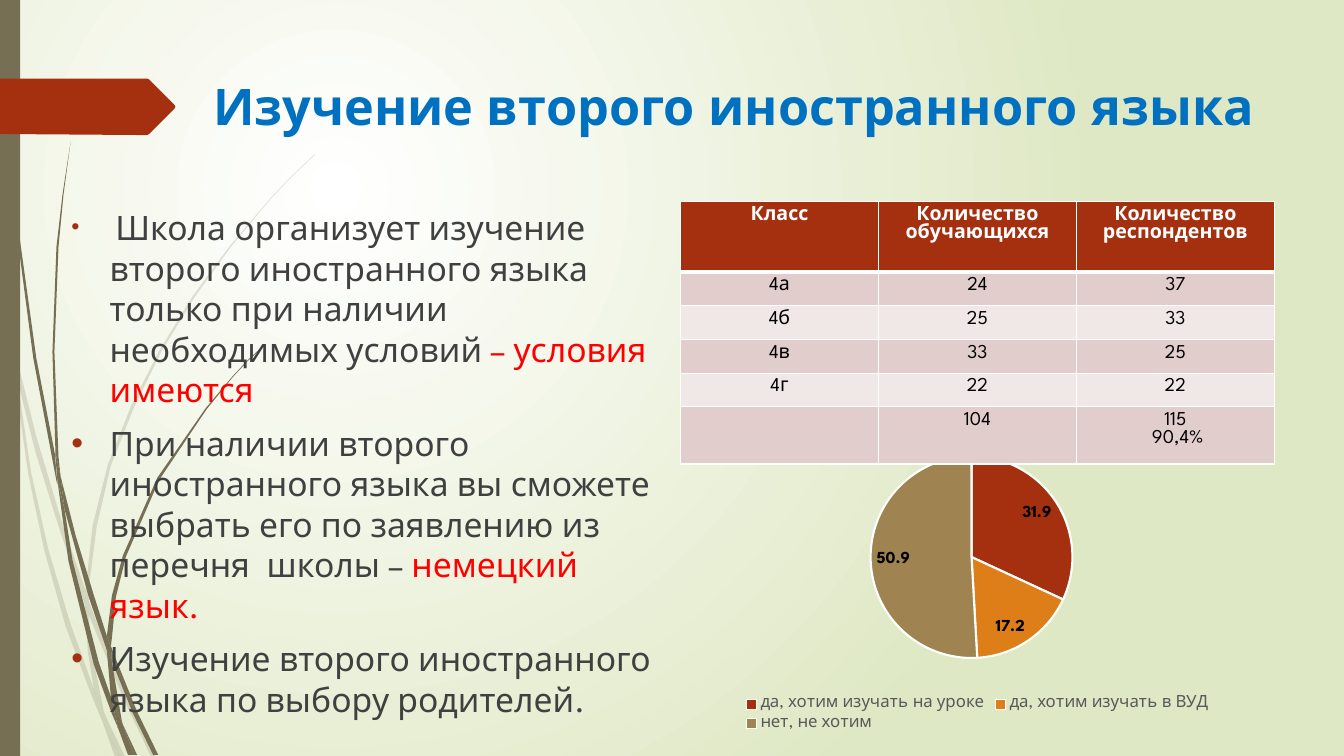
from lxml import etree
from pptx import Presentation
from pptx.chart.data import CategoryChartData
from pptx.dml.color import RGBColor
from pptx.enum.chart import XL_CHART_TYPE, XL_LABEL_POSITION, XL_LEGEND_POSITION
from pptx.enum.shapes import MSO_SHAPE
from pptx.enum.text import MSO_ANCHOR, PP_ALIGN
from pptx.oxml.ns import qn
from pptx.util import Inches, Pt

PIE = XL_CHART_TYPE.PIE
LABEL_INSIDE = XL_LABEL_POSITION.INSIDE_END
LEGEND_BOTTOM = XL_LEGEND_POSITION.BOTTOM
RECTANGLE = MSO_SHAPE.RECTANGLE
TOP = MSO_ANCHOR.TOP
LEFT, CENTER = PP_ALIGN.LEFT, PP_ALIGN.CENTER

FONT = "League Spartan"
WHITE, BLACK, GREY, LEGEND_GREY = "FFFFFF", "000000", "404040", "595959"
OLIVE, RUST, ORANGE, TAN = "766F54", "A53010", "DE7E18", "9F8351"
BLUE, RED, PALE_GREEN = "0070C0", "FF0000", "DFE8C4"
ROW_BANDS = ("E1CDCC", "F0E8E7")

PALE_GRASS = [
    [(0.11, 3.5), (0.09, 3.22), (0, 2.82), (0, 2.99), (0.1, 3.44)],
    [(0.58, 5.22), (0.84, 5.99), (0.85, 5.86), (0.62, 5.2), (0.36, 4.33), (0.14, 3.45),
     (0.17, 3.76), (0.35, 4.48)],
    [(0.92, 6.07), (0.88, 5.96), (0.88, 6.1), (1.23, 6.94), (1.5, 7.51), (1.55, 7.51), (1.27, 6.92)],
    [(1.19, 7.51), (1.24, 7.51), (1.05, 7.11)],
    [(0.93, 6.83), (0.7, 6.19), (0.48, 5.45), (0.31, 4.69), (0.17, 3.76), (0.11, 3.5),
     (0.28, 4.7), (0.44, 5.46), (0.65, 6.21), (0.92, 6.93), (1.01, 7.14), (0.99, 7.07)],
    [(0.84, 5.99), (0.87, 6.46), (0.93, 6.83), (0.96, 6.92), (1.05, 7.11), (1.03, 7.06),
     (0.91, 6.46), (0.88, 6.1), (0.88, 6.08)],
    [(0.88, 5.84), (0.96, 5.22), (1.1, 4.62), (1.33, 4.04), (1.6, 3.49), (1.93, 2.95), (2.29, 2.45),
     (2.68, 1.98), (2.9, 1.75), (3.12, 1.54), (3.12, 1.53), (2.89, 1.75), (2.68, 1.97), (2.28, 2.44),
     (1.91, 2.94), (1.58, 3.48), (1.3, 4.03), (1.07, 4.61), (0.92, 5.21), (0.85, 5.84), (0.85, 5.86),
     (0.88, 5.96)],
    [(1.01, 7.14), (1.14, 7.51), (1.19, 7.51)],
    [(0.88, 6.08), (0.88, 6.1), (0.88, 5.96), (0.85, 5.86), (0.84, 5.99)],
    [(0.96, 6.92), (0.93, 6.83), (0.99, 7.07), (1.01, 7.14), (1.19, 7.51), (1.05, 7.11)],
]
DARK_GRASS = [
    [(0.07, 1.1), (0.17, 2.33), (0.33, 3.55), (0.56, 4.77), (0.57, 4.81), (0.55, 4.57), (0.55, 4.53),
     (0.36, 3.55), (0.19, 2.32), (0.08, 1.09), (0.05, 0.48), (0.04, 0), (0.03, 0), (0.04, 0.48)],
    [(0.88, 5.92), (1.06, 6.45), (1.06, 6.33), (1.06, 6.31), (0.93, 5.9), (0.75, 5.31), (0.6, 4.72),
     (0.64, 5.05)],
    [(1.13, 6.49), (1.1, 6.41), (1.11, 6.56), (1.32, 7.08), (1.52, 7.49), (1.57, 7.49), (1.36, 7.06)],
    [(1.1, 6.91), (0.98, 6.57), (0.72, 5.56), (0.64, 5.05), (0.57, 4.77), (0.68, 5.57), (0.93, 6.59),
     (1.11, 7.08), (1.17, 7.22), (1.16, 7.17)],
    [(0.6, 4.72), (0.58, 4.53), (0.54, 3.49), (0.58, 2.45), (0.63, 1.93), (0.7, 1.41), (0.62, 1.93),
     (0.56, 2.45), (0.52, 3.49), (0.55, 4.49)],
    [(1.33, 7.49), (1.36, 7.49), (1.22, 7.19)],
    [(0.57, 4.77), (0.64, 5.05), (0.6, 4.72), (0.55, 4.49), (0.55, 4.53)],
    [(1.11, 6.33), (1.15, 5.92), (1.25, 5.52), (1.58, 4.76), (2.05, 4.06), (2.31, 3.74), (2.45, 3.59),
     (2.61, 3.44), (2.6, 3.44), (2.45, 3.58), (2.31, 3.73), (2.04, 4.05), (1.56, 4.74), (1.22, 5.51),
     (1.11, 5.91), (1.06, 6.31), (1.1, 6.41)],
    [(1.17, 7.22), (1.27, 7.49), (1.31, 7.49)],
    [(1.06, 6.45), (1.1, 6.91), (1.16, 7.06), (1.22, 7.19), (1.21, 7.16), (1.11, 6.56), (1.09, 6.51)],
    [(1.06, 6.45), (1.09, 6.51), (1.11, 6.56), (1.1, 6.41), (1.06, 6.31)],
    [(1.16, 7.06), (1.1, 6.91), (1.16, 7.17), (1.17, 7.22), (1.3, 7.49), (1.33, 7.49), (1.22, 7.19)],
]
TITLE_TAG = [(1.73, 1.08), (1.48, 1.33), (1.46, 1.34), (1.36, 1.34), (0, 1.33), (0, 0.78),
             (1.46, 0.78), (1.48, 0.79), (1.73, 1.04), (1.74, 1.06)]

CONDITIONS = [
    [(" ", GREY, 16.6),
     ("Школа организует изучение второго иностранного языка только при наличии необходимых условий ",
      GREY, 24),
     ("– условия имеются", RED, 24)],
    [("При наличии второго иностранного языка вы сможете выбрать его по заявлению из перечня  школы – ",
      GREY, 24),
     ("немецкий язык.", RED, 24)],
    [("Изучение второго иностранного языка по выбору родителей.", GREY, 24)],
]
CLASSES = [
    ("Класс", "Количество обучающихся", "Количество респондентов"),
    ("4а", "24", "37"),
    ("4б", "25", "33"),
    ("4в", "33", "25"),
    ("4г", "22", "22"),
    ("", "104", "115\n 90,4%"),
]
CLASS_ROW_HEIGHTS = [0.7] + [0.31] * 4 + [0.46]
ANSWERS = [
    ("да, хотим изучать на уроке", 31.9, RUST),
    ("да, хотим изучать в ВУД", 17.2, ORANGE),
    ("нет, не хотим", 50.9, TAN),
]


def rgb(value):
    return RGBColor.from_string(value)


def format_font(font, size, color, bold=False):
    font.name, font.size, font.bold = FONT, Pt(size), bold
    font.color.rgb = rgb(color)


def write(paragraph, text, size=14, color=BLACK, bold=False, align=LEFT):
    paragraph.alignment = align
    run = paragraph.add_run()
    run.text = text
    format_font(run.font, size, color, bold)


def add_bullet(paragraph, color, indent):
    props = paragraph._p.get_or_add_pPr()
    props.set("marL", str(Inches(indent)))
    props.set("indent", str(-Inches(indent)))
    bullet_color = etree.SubElement(props, qn("a:buClr"))
    etree.SubElement(bullet_color, qn("a:srgbClr"), val=color)
    etree.SubElement(props, qn("a:buFont"), typeface="Arial")
    etree.SubElement(props, qn("a:buChar"), char="•")


def add_borders(cell, bottom):
    """Draw white cell borders; bottom is the lower width in points."""
    props = cell._tc.get_or_add_tcPr()
    for index, (side, width) in enumerate((("L", 1), ("R", 1), ("T", 1), ("B", bottom))):
        line = etree.Element(qn(f"a:ln{side}"), w=str(Pt(width)))
        fill = etree.SubElement(line, qn("a:solidFill"))
        etree.SubElement(fill, qn("a:srgbClr"), val=WHITE)
        props.insert(index, line)


def place_plot(chart, **fractions):
    """Fix the plot's x, y, w and h as fractions of the chart."""
    area = chart._chartSpace.chart.plotArea
    for old in area.findall(qn("c:layout")):
        area.remove(old)
    layout = etree.Element(qn("c:layout"))
    area.insert(0, layout)
    manual = etree.SubElement(layout, qn("c:manualLayout"))
    modes = {"layoutTarget": "inner", "xMode": "edge", "yMode": "edge"}
    for tag, value in {**modes, **fractions}.items():
        etree.SubElement(manual, qn(f"c:{tag}"), val=str(value))


class SlideBuilder:
    def __init__(self, slide):
        self.slide = slide
        self.shapes = slide.shapes

    def background(self, center_color, edge_color):
        fill = self.slide.background.fill
        fill.gradient()
        for stop, color in zip(fill.gradient_stops, (center_color, edge_color)):
            stop.color.rgb = rgb(color)
        gradient = self.slide._element.find(".//" + qn("a:gradFill"))
        gradient.remove(gradient.find(qn("a:lin")))
        circle = etree.SubElement(gradient, qn("a:path"), {"path": "circle"})
        etree.SubElement(circle, qn("a:fillToRect"), l="50000", t="50000", r="100000", b="100000")

    def paint(self, shape, color, opacity=100):
        shape.shadow.inherit = False
        shape.fill.solid()
        shape.fill.fore_color.rgb = rgb(color)
        shape.line.fill.background()
        if opacity < 100:
            swatch = shape._element.spPr.find(".//" + qn("a:srgbClr"))
            etree.SubElement(swatch, qn("a:alpha"), val=str(opacity * 1000))

    def outline(self, points, color, opacity=100, parent=None):
        start, *rest = [(Inches(x), Inches(y)) for x, y in points]
        builder = (parent or self.shapes).build_freeform(*start)
        builder.add_line_segments(rest, close=True)
        self.paint(builder.convert_to_shape(), color, opacity)

    def grass(self, blades, opacity):
        group = self.shapes.add_group_shape()
        for blade in blades:
            self.outline(blade, OLIVE, opacity, group.shapes)

    def bar(self, box, color):
        self.paint(self.shapes.add_shape(RECTANGLE, *map(Inches, box)), color)

    def text_frame(self, box):
        frame = self.shapes.add_textbox(*map(Inches, box)).text_frame
        frame.word_wrap = True
        frame.vertical_anchor = TOP
        return frame

    def title(self, text, box):
        paragraph = self.text_frame(box).paragraphs[0]
        paragraph.line_spacing = Pt(44)
        write(paragraph, text, size=36, color=BLUE, bold=True, align=CENTER)

    def bullets(self, items, box):
        frame = self.text_frame(box)
        for index, runs in enumerate(items):
            paragraph = frame.add_paragraph() if index else frame.paragraphs[0]
            paragraph.line_spacing, paragraph.space_after = Pt(29), Pt(9)
            add_bullet(paragraph, RUST, 0.38)
            for text, color, size in runs:
                write(paragraph, text, size=size, color=color)

    def table(self, rows, heights, left, top, width):
        box = map(Inches, (left, top, width, sum(heights)))
        grid = self.shapes.add_table(len(rows), len(rows[0]), *box).table
        for r, (values, height) in enumerate(zip(rows, heights)):
            header = r == 0
            grid.rows[r].height = Inches(height)
            for c, value in enumerate(values):
                cell = grid.cell(r, c)
                cell.fill.solid()
                cell.fill.fore_color.rgb = rgb(RUST if header else ROW_BANDS[(r - 1) % 2])
                add_borders(cell, bottom=3 if header else 1)
                for i, line in enumerate(value.split("\n")):
                    frame = cell.text_frame
                    paragraph = frame.add_paragraph() if i else frame.paragraphs[0]
                    write(paragraph, line, color=WHITE if header else BLACK, bold=header, align=CENTER)

    def pie(self, answers, box):
        names, shares, colors = zip(*answers)
        data = CategoryChartData(number_format="General")
        data.categories = names
        data.add_series("Series 1", shares)
        chart = self.shapes.add_chart(PIE, *map(Inches, box), data).chart
        chart.has_title = False
        format_font(chart.font, 10, BLACK)
        chart.has_legend = True
        chart.legend.position = LEGEND_BOTTOM
        chart.legend.include_in_layout = False
        format_font(chart.legend.font, 12, LEGEND_GREY)
        place_plot(chart, x=0.32, y=0.05, w=0.34, h=0.69)
        plot = chart.plots[0]
        plot.vary_by_categories = True
        plot.has_data_labels = True
        labels = plot.data_labels
        labels.show_value, labels.show_percentage = True, False
        labels.position = LABEL_INSIDE
        format_font(labels.font, 12, BLACK, bold=True)
        for index, color in enumerate(colors):
            look = plot.series[0].points[index].format
            look.fill.solid()
            look.fill.fore_color.rgb = rgb(color)
            look.line.color.rgb = rgb(WHITE)
            look.line.width = Pt(1.5)


def main():
    deck = Presentation()
    deck.slide_width, deck.slide_height = Inches(13.33), Inches(7.5)
    page = SlideBuilder(deck.slides.add_slide(deck.slide_layouts[6]))
    page.background(WHITE, PALE_GREEN)
    page.grass(PALE_GRASS, 20)
    page.grass(DARK_GRASS, 100)
    page.bar((0, 0, 0.2, 7.5), OLIVE)
    page.outline(TITLE_TAG, RUST)
    page.pie(ANSWERS, (6.75, 4.37, 5.89, 2.93))
    page.title("Изучение второго иностранного языка", (1.98, 0.68, 10.6, 1.08))
    page.bullets(CONDITIONS, (0.61, 2, 6, 4.76))
    page.table(CLASSES, CLASS_ROW_HEIGHTS, left=6.75, top=2, width=5.89)
    deck.save("out.pptx")


if __name__ == "__main__":
    main()
